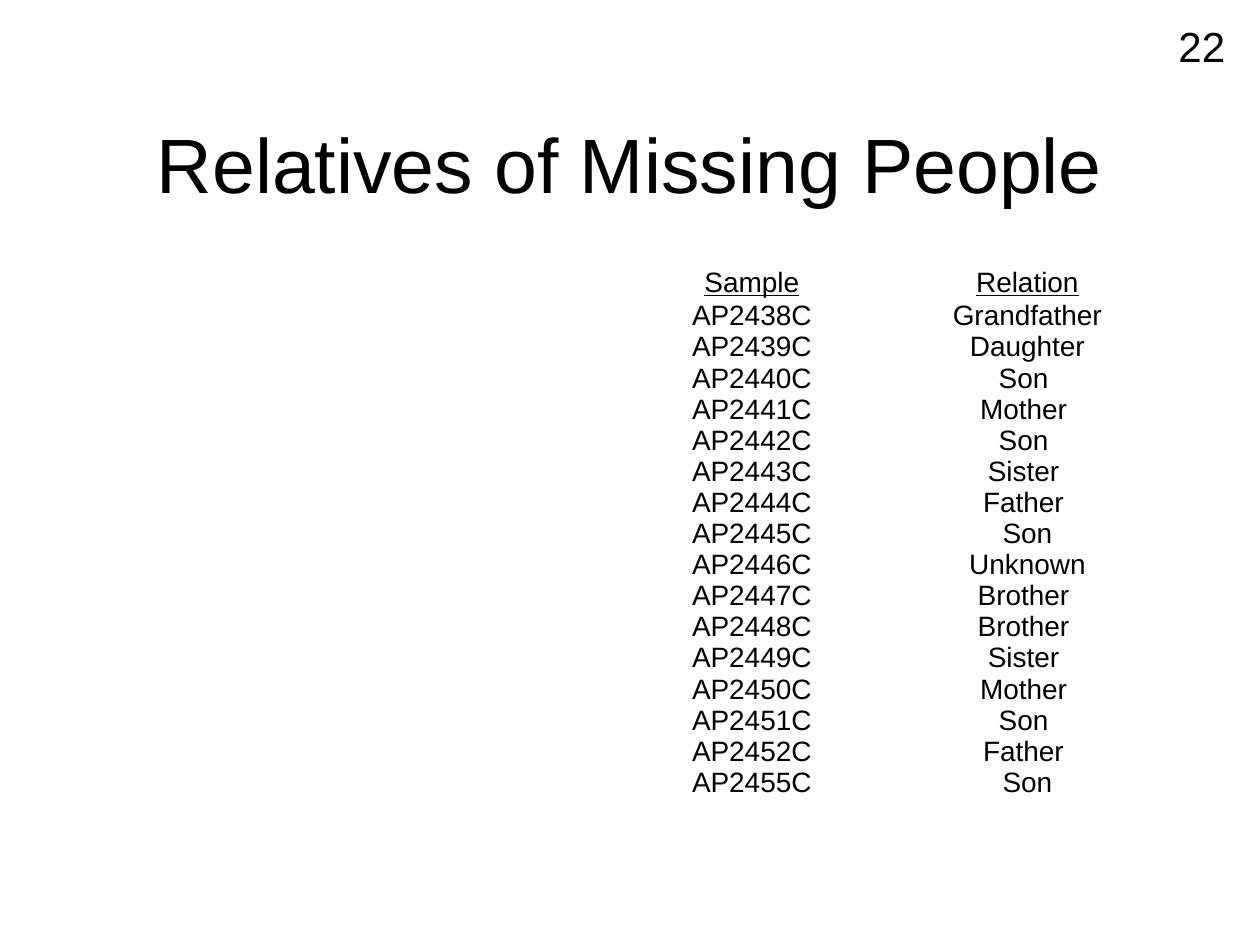
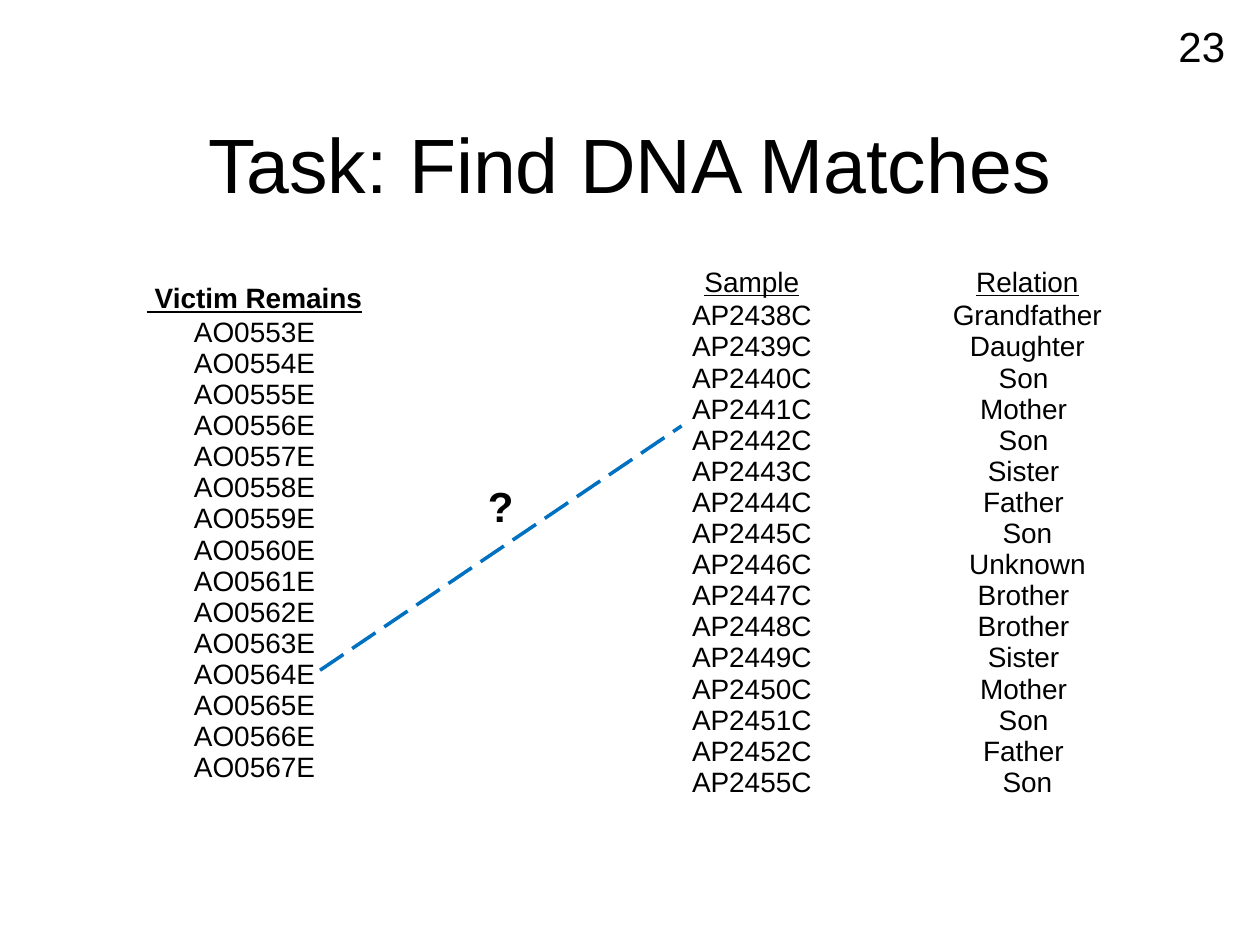
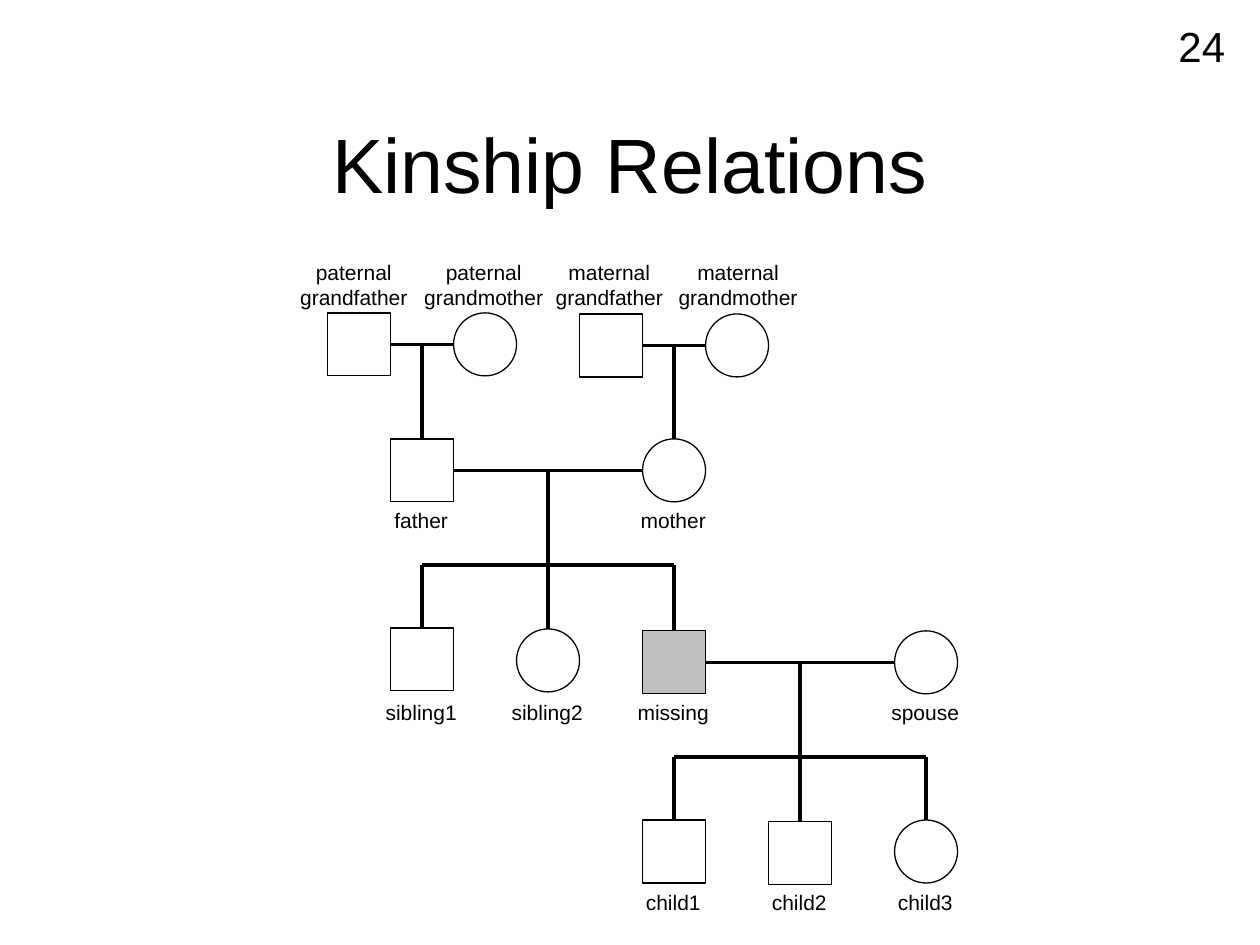
import pptx
import pptx.util
import pptx.dml.color
import pptx.enum.dml
import pptx.enum.shapes
import pptx.enum.text
from lxml import etree

Pt = pptx.util.Pt
Form = pptx.enum.shapes.MSO_SHAPE
Align = pptx.enum.text.PP_ALIGN
Anchor = pptx.enum.text.MSO_ANCHOR

FACE = "Arial"
HUE = {"ink": "000000", "paper": "FFFFFF", "link": "0070C0", "gone": "BFBFBF"}
TITLE = (54, 48.2, 612, 90)
PAGE = (646, 7.9, 61.2, 33.1)

KIN = {
    "at": (363.8, 152.6), "tall": 345.6, "bold": False,
    "cols": [
        (131.6, "Sample", [
            "AP2438C", "AP2439C", "AP2440C", "AP2441C", "AP2442C", "AP2443C",
            "AP2444C", "AP2445C", "AP2446C", "AP2447C", "AP2448C", "AP2449C",
            "AP2450C", "AP2451C", "AP2452C", "AP2455C"]),
        (183.4, "Relation", [
            "Grandfather", "Daughter", "Son ", "Mother ", "Son ", "Sister ",
            "Father ", "Son", "Unknown", "Brother ", "Brother ", "Sister ",
            "Mother ", "Son ", "Father ", "Son"]),
    ],
}
DEAD = {
    "at": (64.8, 162), "tall": 326.2, "bold": True,
    "cols": [(161.3, " Victim Remains", [f"AO{n:04}E" for n in range(553, 568)])],
}

SIDE = 36
LEFT = 187.2
ABOVE = 144.7
BELOW = (286.6, 396.4, 504.5)
MEN = {
    "pgf": (0, 178.8), "mgf": (4, 179.4), "father": (1, 250.8),
    "sibling1": (1, 358.8), "missing": (5, 360.5),
    "child1": (5, 468.6), "child2": (7, 469.4),
}
WOMEN = {
    "pgm": (2, 178.8), "mgm": (6, 179.4), "mother": (5, 250.8),
    "sibling2": (3, 359.4), "spouse": (9, 360.5), "child3": (9, 468.6),
}
ELDERS = {
    "pgf": ("paternal\ngrandfather", -3, 76.3, False),
    "pgm": ("paternal\ngrandmother", -0.8, 82.8, False),
    "mgf": ("maternal grandfather", -1, 90.7, True),
    "mgm": ("maternal grandmother", 0.6, 90.7, True),
}
UNIONS = [
    ("pgf", "pgm", None, ["father"]),
    ("mgf", "mgm", None, ["mother"]),
    ("father", "mother", 323, ["sibling1", "sibling2", "missing"]),
    ("missing", "spouse", 432.7, ["child1", "child2", "child3"]),
]


def tint(name):
    return pptx.dml.color.RGBColor.from_string(HUE[name])


def box(spot):
    return [Pt(n) for n in spot]


def style(frame, size, align=Align.CENTER, bold=False, under=False):
    for par in frame.paragraphs:
        par.alignment = align
        font = par.font
        font.name, font.size, font.bold = FACE, Pt(size), bold
        font.underline = under
        font.color.rgb = tint("ink")


def label(slide, text, spot, size, wrap=False, **look):
    frame = slide.shapes.add_textbox(*box(spot)).text_frame
    frame.text = text
    frame.word_wrap = wrap
    style(frame, size, **look)


def start(deck, title, page):
    slide = deck.slides.add_slide(deck.slide_layouts[5])
    head = slide.shapes.title
    head.left, head.top, head.width, head.height = box(TITLE)
    head.text_frame.text = title
    head.text_frame.vertical_anchor = Anchor.MIDDLE
    style(head.text_frame, 44)
    label(slide, str(page), PAGE, 24, wrap=True, align=Align.RIGHT)
    return slide


def fill(cell, text, **look):
    cell.margin_left = cell.margin_right = Pt(5)
    cell.margin_top = cell.margin_bottom = 0
    cell.fill.solid()
    cell.fill.fore_color.rgb = tint("paper")
    cell.text_frame.text = text
    style(cell.text_frame, 16, **look)


def roster(slide, data):
    cols = data["cols"]
    wide = sum(col[0] for col in cols)
    shape = slide.shapes.add_table(2, len(cols), *box((*data["at"], wide, data["tall"])))
    table = shape.table
    table.first_row = table.horz_banding = False
    for i, (width, head, names) in enumerate(cols):
        table.columns[i].width = Pt(width)
        fill(table.cell(0, i), head, bold=data["bold"], under=True)
        fill(table.cell(1, i), "\n".join(names))
    for row in table.rows:
        row.height = 0
    shape.height = Pt(data["tall"])


def wire(slide, a, b, hue="ink"):
    line = slide.shapes.add_connector(
        pptx.enum.shapes.MSO_CONNECTOR.STRAIGHT, *box((*a, *b)))
    line.line.color.rgb = tint(hue)
    line.line.width = Pt(2)
    etree.SubElement(line._element.spPr, pptx.oxml.ns.qn("a:effectLst"))
    return line


def person(slide, name, col, top):
    form = Form.RECTANGLE if name in MEN else Form.OVAL
    x = LEFT + col * SIDE
    shape = slide.shapes.add_shape(form, *box((x, top, SIDE, SIDE)))
    shape.shadow.inherit = False
    shape.line.color.rgb = tint("ink")
    shape.line.width = Pt(0.75)
    if name == "missing":
        shape.fill.solid()
        shape.fill.fore_color.rgb = tint("gone")
    else:
        shape.fill.background()
    text, shift, wide, wrap = ELDERS.get(name, (name, -0.5, 60, False))
    if name in ELDERS:
        y, tall = ABOVE, 36
    else:
        y, tall = min(n for n in BELOW if n > top + SIDE - 2), 21.6
    mid = x + SIDE / 2 + shift
    label(slide, text, (mid - wide / 2, y, wide, tall), 12, wrap)
    return shape


def family(slide):
    folk = {**MEN, **WOMEN}
    shapes = {name: person(slide, name, *spot) for name, spot in folk.items()}

    def mid(name):
        return LEFT + (folk[name][0] + 0.5) * SIDE

    for man, wife, bar, kids in UNIONS:
        y = folk[man][1] + SIDE / 2
        pair = wire(slide, (mid(wife) - SIDE / 2, y), (mid(man) + SIDE / 2, y))
        pair.end_connect(shapes[man], 3)
        if bar:
            wire(slide, (mid(kids[0]), bar), (mid(kids[-1]), bar))
        for i, kid in enumerate(kids):
            top = y if i == len(kids) // 2 else bar
            drop = wire(slide, (mid(kid), top), (mid(kid), folk[kid][1]))
            if kid in MEN:
                drop.end_connect(shapes[kid], 0)


def main():
    deck = pptx.Presentation()
    deck.slide_width, deck.slide_height = Pt(720), Pt(540)

    roster(start(deck, "Relatives of Missing People", 22), KIN)

    task = start(deck, "Task: Find DNA Matches", 23)
    roster(task, DEAD)
    roster(task, KIN)
    guess = wire(task, (182.9, 383), (389.5, 243.4), "link")
    guess.line.dash_style = pptx.enum.dml.MSO_LINE.LONG_DASH
    label(task, "?", (271.4, 270.9, 29.5, 36), 24, bold=True)

    family(start(deck, "Kinship Relations", 24))
    deck.save("out.pptx")


if __name__ == "__main__":
    main()
